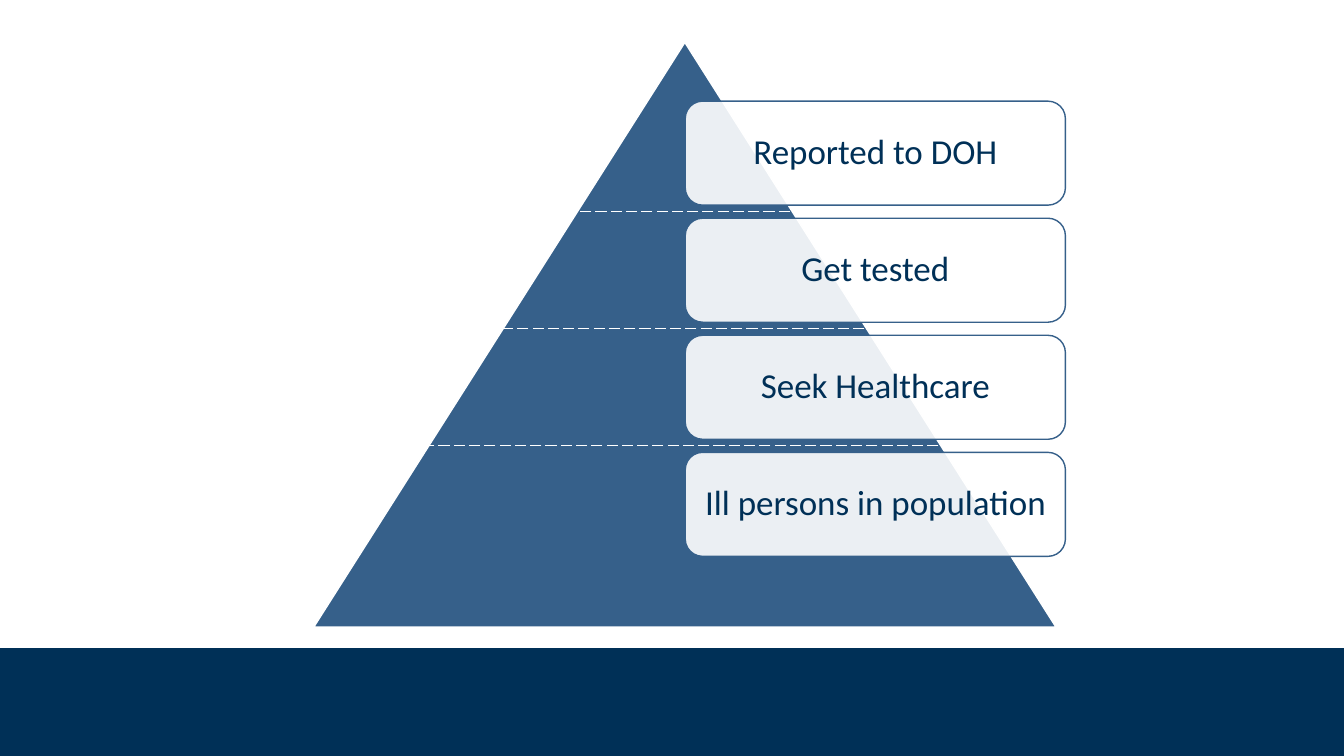
from lxml.etree import SubElement
from pptx import Presentation
from pptx.dml.color import RGBColor
from pptx.enum.dml import MSO_LINE_DASH_STYLE as Dash
from pptx.enum.shapes import MSO_CONNECTOR as Connector
from pptx.enum.shapes import MSO_SHAPE as Shape
from pptx.enum.text import MSO_ANCHOR as Anchor
from pptx.enum.text import PP_ALIGN as Align
from pptx.oxml.ns import qn
from pptx.util import Cm, Pt

COLOURS = {"navy": "003057", "blue": "36608A", "white": "FFFFFF"}
LEVELS = ["Reported to DOH", "Get tested", "Seek Healthcare", "Ill persons in population"]
DIVIDERS = [(23.37, 10.52), (22.94, 10.11), (23.65, 10.8)]
LEVEL_PITCH = 2.95
FIRST_LEVEL_TOP = 2.55
FIRST_DIVIDER_TOP = 5.33


def colour(name):
    return RGBColor.from_string(COLOURS[name])


def add_block(page, kind, left, top, width, height, fill, line=None):
    block = page.shapes.add_shape(kind, Cm(left), Cm(top), Cm(width), Cm(height))
    block.shadow.inherit = False
    block.fill.solid()
    block.fill.fore_color.rgb = colour(fill)
    if line:
        block.line.color.rgb = colour(line)
        block.line.width = Pt(1)
    else:
        block.line.fill.background()
    return block


def set_opacity(block, percent):
    tint = block.fill._xPr.find(qn("a:solidFill"))[0]
    SubElement(tint, qn("a:alpha")).set("val", str(percent * 1000))


def add_level(page, top, label):
    box = add_block(page, Shape.ROUNDED_RECTANGLE, 17.27, top, 9.58, 2.62, "white", "blue")
    set_opacity(box, 90)
    frame = box.text_frame
    frame.text = label
    frame.word_wrap = True
    frame.vertical_anchor = Anchor.MIDDLE
    frame.margin_left = frame.margin_right = Cm(0.2)
    frame.margin_top = frame.margin_bottom = Cm(0.2)
    para = frame.paragraphs[0]
    para.alignment = Align.CENTER
    para.line_spacing = 0.9
    span = para.runs[0]
    span.font.name = "Calibri"
    span.font.size = Pt(25)
    span.font.color.rgb = colour("navy")


def add_divider(page, start, end, top):
    divider = page.shapes.add_connector(Connector.STRAIGHT, Cm(start), Cm(top), Cm(end), Cm(top))
    divider.line.color.rgb = colour("white")
    divider.line.width = Pt(1)
    divider.line.dash_style = Dash.LONG_DASH
    SubElement(divider._element.spPr, qn("a:effectLst"))


def main():
    deck = Presentation()
    deck.slide_width = Cm(33.87)
    deck.slide_height = Cm(19.05)
    page = deck.slides.add_slide(deck.slide_layouts[6])
    add_block(page, Shape.RECTANGLE, 0, 16.33, 33.87, 2.72, "navy")
    add_block(page, Shape.ISOSCELES_TRIANGLE, 7.91, 1.07, 18.7, 14.73, "blue", "white")
    for index, label in enumerate(LEVELS):
        add_level(page, FIRST_LEVEL_TOP + index * LEVEL_PITCH, label)
    for index, (start, end) in enumerate(DIVIDERS):
        add_divider(page, start, end, FIRST_DIVIDER_TOP + index * LEVEL_PITCH)
    deck.save("out.pptx")


if __name__ == "__main__":
    main()
